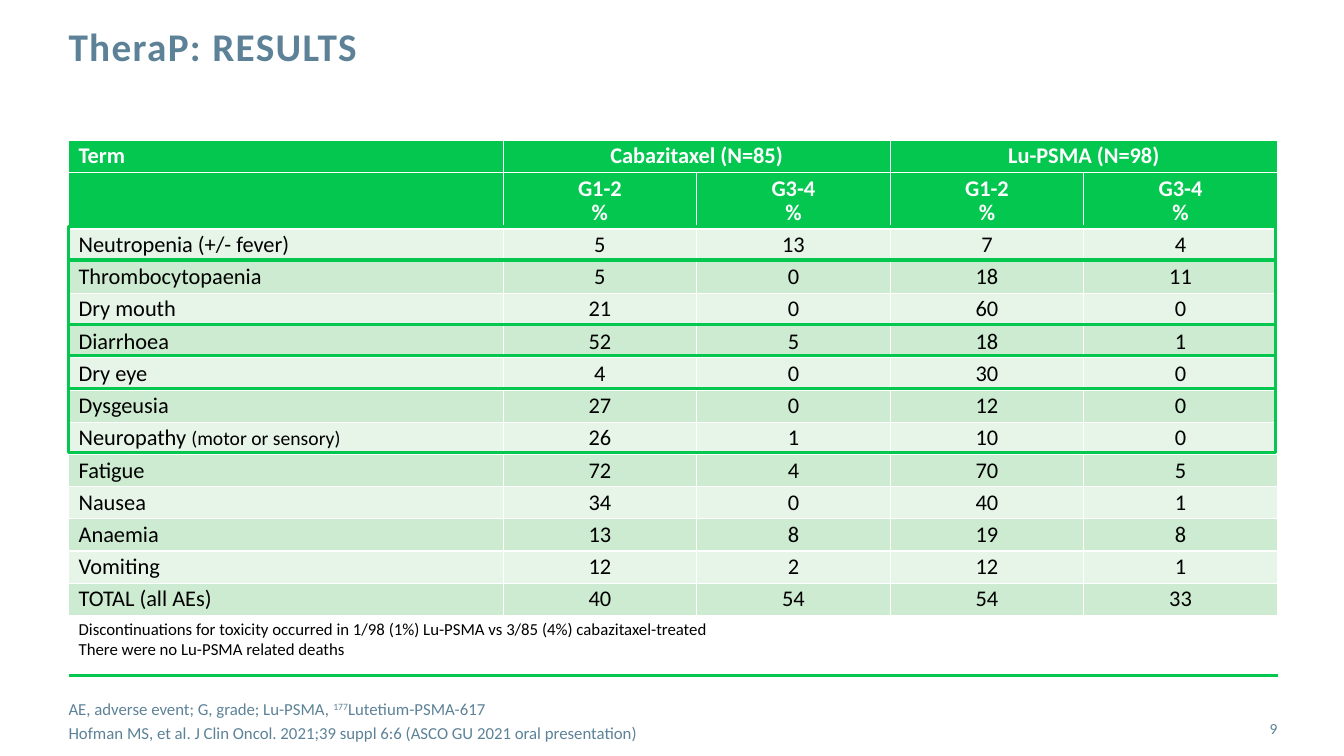
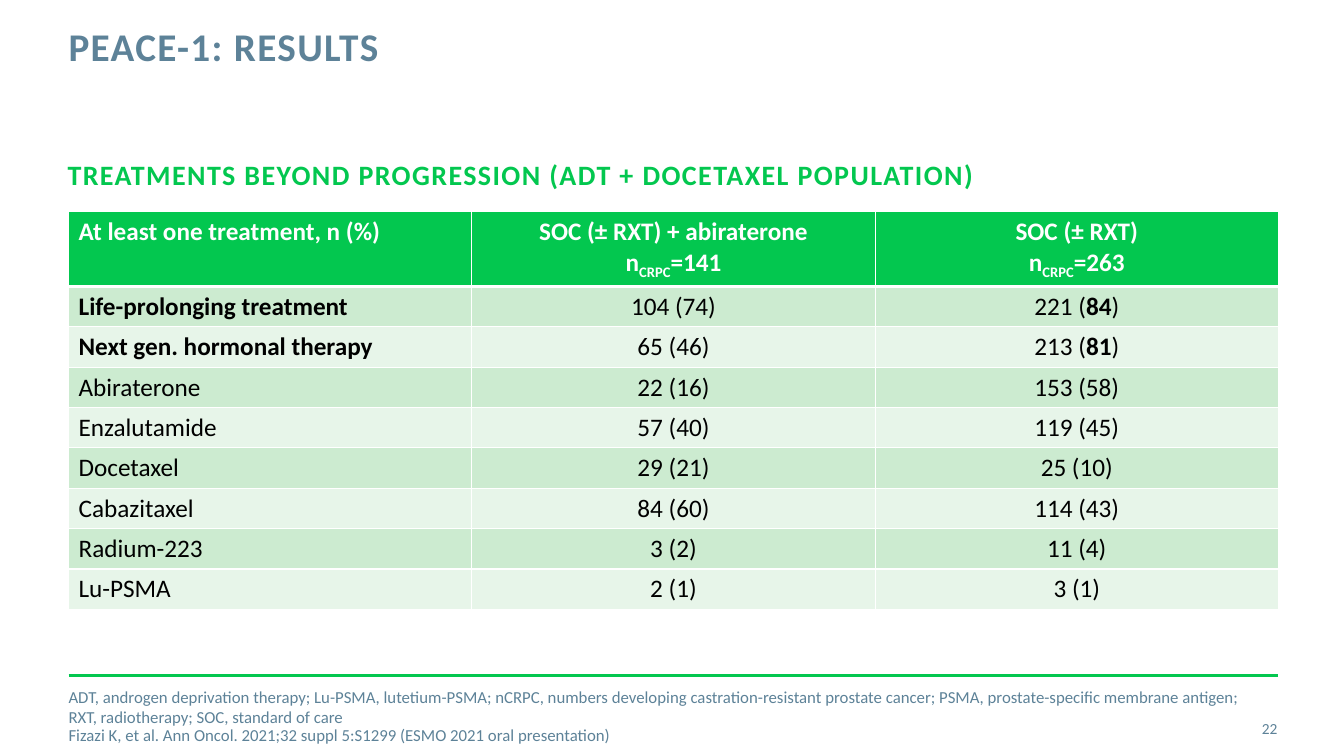
from copy import deepcopy

from lxml import etree
from pptx import Presentation
from pptx.dml.color import RGBColor
from pptx.enum.shapes import MSO_CONNECTOR, MSO_SHAPE
from pptx.enum.text import MSO_ANCHOR, PP_ALIGN
from pptx.oxml.ns import qn
from pptx.util import Inches, Pt

LEFT, CENTER, RIGHT = PP_ALIGN.LEFT, PP_ALIGN.CENTER, PP_ALIGN.RIGHT
TOP, MIDDLE = MSO_ANCHOR.TOP, MSO_ANCHOR.MIDDLE
LINE, RECT = MSO_CONNECTOR.STRAIGHT, MSO_SHAPE.RECTANGLE

GREEN, SLATE, WHITE, BLACK = "03C74F", "5D8298", "FFFFFF", "000000"
DARK, LIGHT = "CCEBD0", "E7F5E9"
FONT = "Calibri"
EDGE = 0.68


def rgb(code):
    return RGBColor.from_string(code)


class Deck:
    def __init__(self):
        self.prs = Presentation()
        self.prs.slide_width = Inches(13.33)
        self.prs.slide_height = Inches(7.5)
        self.slide = None

    # Slide frame: title, footer rule and page number
    def start(self, title, page):
        self.slide = self.prs.slides.add_slide(self.prs.slide_layouts[6])
        self.line(EDGE, 6.7, 12.68, 2)
        self.text(EDGE, 0.27, 9.56, 0.88, [title], 28, SLATE,
                  bold=True, track=1, space=Pt(30))
        self.text(11.81, 7.03, 0.86, 0.4, [page], 11, SLATE, MIDDLE, align=RIGHT)

    def foot(self, top, width, paras, gap=0):
        return self.text(EDGE, top, width, 0.4, paras, 12, SLATE, MIDDLE, gap=gap)

    # Text: a paragraph is a string or a list of strings and (string, style) pairs
    def fill_text(self, frame, paras, size, color, bold=False, align=LEFT,
                  space=None, gap=0, track=0):
        for i, parts in enumerate(paras):
            para = frame.add_paragraph() if i else frame.paragraphs[0]
            para.alignment = align
            if space:
                para.line_spacing = space
            if i and gap:
                para.space_before = Pt(gap)
            for part in [parts] if isinstance(parts, str) else parts:
                words, style = (part, {}) if isinstance(part, str) else part
                look = {"size": size, "bold": bold, "base": 0, **style}
                for j, row in enumerate(words.split("\n")):
                    if j:
                        para.add_line_break()
                    run = para.add_run()
                    run.text = row
                    font = run.font
                    font.name, font.size, font.bold = FONT, Pt(look["size"]), look["bold"]
                    font.color.rgb = rgb(color)
                    props = run._r.get_or_add_rPr()
                    if track:
                        props.set("spc", str(track * 100))
                    if look["base"]:
                        props.set("baseline", str(look["base"] * 1000))
                    if j:
                        run._r.getprevious().append(deepcopy(props))

    def text(self, x, y, w, h, paras, size, color, anchor=TOP, **style):
        box = self.slide.shapes.add_textbox(Inches(x), Inches(y), Inches(w), Inches(h))
        frame = box.text_frame
        frame.word_wrap = True
        frame.vertical_anchor = anchor
        frame.margin_left = frame.margin_right = 0
        frame.margin_top = frame.margin_bottom = 0
        self.fill_text(frame, paras, size, color, **style)
        return frame

    # Lines and outlines
    def line(self, x, y, end, width):
        rule = self.slide.shapes.add_connector(
            LINE, Inches(x), Inches(y), Inches(end), Inches(y))
        rule.line.color.rgb = rgb(GREEN)
        rule.line.width = Pt(width)
        etree.SubElement(rule._element.spPr, qn("a:effectLst"))

    def frame(self, x, y, w, h, width):
        box = self.slide.shapes.add_shape(RECT, Inches(x), Inches(y), Inches(w), Inches(h))
        box.shadow.inherit = False
        box.fill.background()
        box.line.color.rgb = rgb(GREEN)
        box.line.width = Pt(width)

    # Tables
    def border(self, cell, top, base):
        props = cell._tc.get_or_add_tcPr()
        for i, (side, width) in enumerate(zip("LRTB", (1, 1, top, base))):
            edge = etree.Element(qn("a:ln" + side), w=str(Pt(width)))
            fill = etree.SubElement(edge, qn("a:solidFill"))
            etree.SubElement(fill, qn("a:srgbClr"), val=WHITE)
            props.insert(i, edge)

    def table(self, y, cols, heights, rows, size, heads, rule, anchor, pad, space=None):
        shape = self.slide.shapes.add_table(
            len(heights), len(cols), Inches(EDGE), Inches(y),
            Inches(sum(cols)), Inches(sum(heights)))
        grid = shape.table
        grid.first_row = grid.horz_banding = False
        for col, width in zip(grid.columns, cols):
            col.width = Inches(width)
        for r, height in enumerate(heights):
            grid.rows[r].height = Inches(height)
            head = r < heads
            for c in range(len(cols)):
                cell = grid.cell(r, c)
                cell.vertical_anchor = anchor
                cell.margin_top = cell.margin_bottom = Inches(pad)
                cell.fill.solid()
                cell.fill.fore_color.rgb = rgb(GREEN if head else DARK if r % 2 else LIGHT)
                self.border(cell, rule if r == heads else 1, rule if r == heads - 1 else 1)
                if r < len(rows) and rows[r][c]:
                    self.fill_text(cell.text_frame, [rows[r][c]], size,
                                   WHITE if head else BLACK, bold=head,
                                   align=CENTER if c else LEFT, space=space)
        return grid


def events(deck):
    deck.start("TheraP: RESULTS", "9")
    deck.foot(6.95, 8.88, [
        ["AE, adverse event; G, grade; Lu-PSMA, ", ("177", {"base": 30}),
         "Lutetium-PSMA-617"],
        "Hofman MS, et al. J Clin Oncol. 2021;39 suppl 6:6 (ASCO GU 2021 oral presentation)",
    ], gap=3)

    # Adverse events by grade
    rows = [
        ("Term", "Cabazitaxel (N=85)", "", "Lu-PSMA (N=98)", ""),
        ("", *("G1-2\n%", "G3-4\n%") * 2),
        ("Neutropenia (+/- fever)", "5", "13", "7", "4"),
        ("Thrombocytopaenia", "5", "0", "18", "11"),
        ("Dry mouth", "21", "0", "60", "0"),
        ("Diarrhoea", "52", "5", "18", "1"),
        ("Dry eye", "4", "0", "30", "0"),
        ("Dysgeusia", "27", "0", "12", "0"),
        (["Neuropathy ", ("(motor or sensory)", {"size": 14})], "26", "1", "10", "0"),
        ("Fatigue", "72", "4", "70", "5"),
        ("Nausea", "34", "0", "40", "1"),
        ("Anaemia", "13", "8", "19", "8"),
        ("Vomiting", "12", "2", "12", "1"),
        ("TOTAL (all AEs)", "40", "54", "54", "33"),
    ]
    heights = [0.32, 0.56] + [0.32] * 12 + [0.48]
    grid = deck.table(1.39, [4.31] + [1.92] * 4, heights, rows, 16,
                      heads=2, rule=2.25, anchor=MIDDLE, pad=0.04, space=0.9)
    for c in (1, 3):
        grid.cell(0, c).merge(grid.cell(0, c + 1))

    # Closing note in the last row
    note = grid.cell(14, 0)
    note.merge(grid.cell(14, 4))
    note.fill.background()
    deck.fill_text(note.text_frame, [
        "Discontinuations for toxicity occurred in 1/98 (1%) Lu-PSMA vs "
        "3/85 (4%) cabazitaxel-treated",
        "There were no Lu-PSMA related deaths",
    ], 12, BLACK)

    # Highlighted rows
    deck.frame(EDGE, 2.25, 11.97, 2.24, 2.25)
    for y in (2.58, 3.22, 3.53, 3.85):
        deck.line(EDGE, y, 12.64, 2.25)


def therapy(deck):
    deck.start("PEACE-1: RESULTS", "22")
    deck.text(0.67, 1.56, 12, 0.5,
              ["TREATMENTS BEYOND PROGRESSION (ADT + DOCETAXEL POPULATION)"],
              20, GREEN, bold=True, track=1)

    # Treatments by arm
    strong, sub = {"bold": True}, ("CRPC", {"base": -25})
    rows = [
        ("At least one treatment, n (%)",
         ["SOC (± RXT) + abiraterone\nn", sub, "=141"],
         ["SOC (± RXT)\nn", sub, "=263"]),
        ([("Life-prolonging treatment", strong)], "104 (74)",
         ["221 (", ("84", strong), ")"]),
        ([("Next gen. hormonal therapy", strong)], "65 (46)",
         ["213 (", ("81", strong), ")"]),
        ("Abiraterone", "22 (16)", "153 (58)"),
        ("Enzalutamide", "57 (40)", "119 (45)"),
        ("Docetaxel", "29 (21)", "25 (10)"),
        ("Cabazitaxel", "84 (60)", "114 (43)"),
        ("Radium-223", "3 (2)", "11 (4)"),
        ("Lu-PSMA", "2 (1)", "3 (1)"),
    ]
    deck.table(2.1, [4] * 3, [0.74] + [0.4] * 8, rows, 18,
               heads=1, rule=3, anchor=TOP, pad=0.05)

    notes = deck.foot(6.9, 11.74, [
        "ADT, androgen deprivation therapy; Lu-PSMA, lutetium-PSMA; nCRPC, numbers "
        "developing castration-resistant prostate cancer; PSMA, prostate-specific "
        "membrane antigen; RXT, radiotherapy; SOC, standard of care",
        "Fizazi K, et al. Ann Oncol. 2021;32 suppl 5:S1299 (ESMO 2021 oral presentation)",
    ])
    notes.paragraphs[-1].line_spacing = 0.9


def main():
    deck = Deck()
    events(deck)
    therapy(deck)
    deck.prs.save("out.pptx")


if __name__ == "__main__":
    main()
